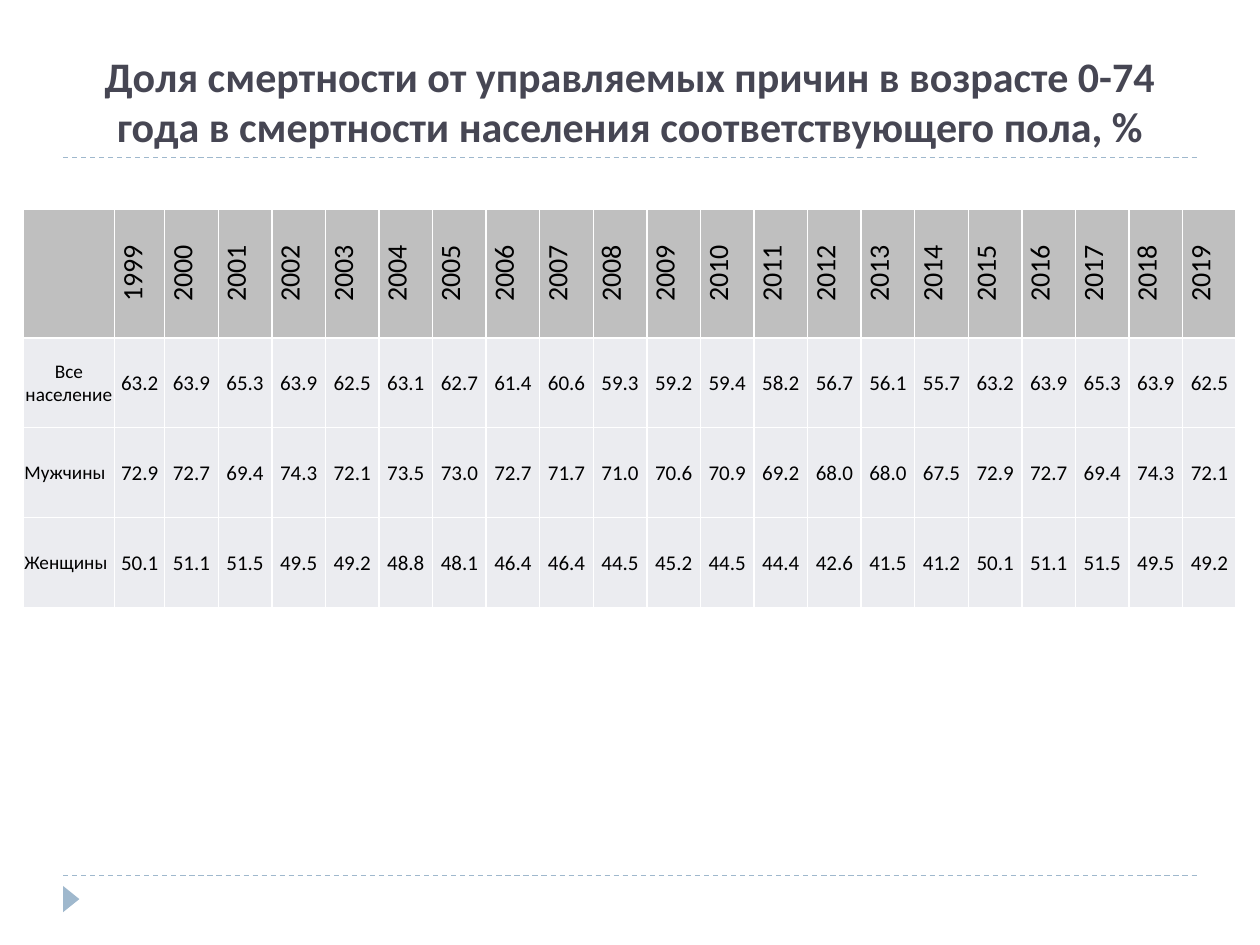
"""Build a slide with a table of death shares by year and sex."""
from dataclasses import dataclass

from lxml.etree import SubElement
from pptx import Presentation
from pptx.dml.color import RGBColor
from pptx.enum.dml import MSO_LINE
from pptx.enum.shapes import MSO_CONNECTOR, MSO_SHAPE
from pptx.enum.text import MSO_ANCHOR, MSO_AUTO_SIZE, PP_ALIGN
from pptx.oxml import parse_xml
from pptx.oxml.ns import nsdecls, qn
from pptx.util import Cm, Pt


@dataclass(frozen=True)
class Theme:
    """Hold the colours, font and type sizes."""
    font: str = "Calibri"
    title: str = "464653"
    text: str = "000000"
    accent: str = "9FB8CD"
    head: str = "BFBFBF"
    body: str = "EBECF0"
    grid: str = "FFFFFF"
    title_pt: int = 24
    year_pt: int = 16
    label_pt: int = 11
    value_pt: int = 12


THEME = Theme()
TITLE = ("Доля смертности от управляемых причин в возрасте 0-74 года "
         "в смертности населения соответствующего пола, %")
YEARS = [str(year) for year in range(1999, 2020)]
ROWS = {
    "Все население": "63.2 63.9 65.3 63.9 62.5 63.1 62.7 61.4 60.6 59.3 59.2 "
                     "59.4 58.2 56.7 56.1 55.7 63.2 63.9 65.3 63.9 62.5",
    "Мужчины": "72.9 72.7 69.4 74.3 72.1 73.5 73.0 72.7 71.7 71.0 70.6 "
               "70.9 69.2 68.0 68.0 67.5 72.9 72.7 69.4 74.3 72.1",
    "Женщины": "50.1 51.1 51.5 49.5 49.2 48.8 48.1 46.4 46.4 44.5 45.2 "
               "44.5 44.4 42.6 41.5 41.2 50.1 51.1 51.5 49.5 49.2",
}


def add_text(frame, text, size, tint, align=PP_ALIGN.CENTER, bold=False):
    """Write one styled run into the first paragraph of a frame."""
    para = frame.paragraphs[0]
    para.alignment = align
    run = para.add_run()
    run.text = text
    run.font.name = THEME.font
    run.font.size = Pt(size)
    run.font.bold = bold
    run.font.color.rgb = RGBColor.from_string(tint)


def add_rule(slide, left, top, width):
    """Draw a dashed level rule."""
    rule = slide.shapes.add_connector(
        MSO_CONNECTOR.STRAIGHT, Cm(left), Cm(top), Cm(left + width), Cm(top))
    rule.line.color.rgb = RGBColor.from_string(THEME.accent)
    rule.line.width = Pt(0.75)
    rule.line.dash_style = MSO_LINE.DASH
    SubElement(rule._element.spPr, qn("a:effectLst"))


def add_title(slide, left, top, width, height):
    """Place the title with a rule along its lower edge."""
    title = slide.shapes.title
    title.left, title.top = Cm(left), Cm(top)
    title.width, title.height = Cm(width), Cm(height)
    frame = title.text_frame
    frame.word_wrap = True
    frame.auto_size = MSO_AUTO_SIZE.NONE
    frame.vertical_anchor = MSO_ANCHOR.BOTTOM
    add_text(frame, TITLE, THEME.title_pt, THEME.title, bold=True)
    add_rule(slide, left, top + height, width)


def add_foot(slide, left, top, width):
    """Draw the foot rule and the marker below it."""
    add_rule(slide, left, top, width)
    mark = slide.shapes.add_shape(
        MSO_SHAPE.ISOSCELES_TRIANGLE,
        Cm(left - 0.1), Cm(top + 0.31), Cm(0.53), Cm(0.33))
    mark.rotation = 90
    mark.shadow.inherit = False
    mark.fill.solid()
    mark.fill.fore_color.rgb = RGBColor.from_string(THEME.accent)
    mark.line.fill.background()


def style_cell(cell, tint):
    """Set the fill, thin margins and borders of a cell."""
    cell.fill.solid()
    cell.fill.fore_color.rgb = RGBColor.from_string(tint)
    cell.vertical_anchor = MSO_ANCHOR.MIDDLE
    cell.margin_left = cell.margin_right = cell.margin_top = Cm(0.02)
    cell.margin_bottom = 0
    props = cell._tc.get_or_add_tcPr()
    for spot, side in enumerate(("lnL", "lnR", "lnT", "lnB")):
        props.insert(spot, parse_xml(
            f'<a:{side} {nsdecls("a")} w="{Pt(1)}"><a:solidFill>'
            f'<a:srgbClr val="{THEME.grid}"/></a:solidFill></a:{side}>'))


def add_grid(slide, left, top, width, height):
    """Fill the table of shares, one column for each year."""
    first, second, head = 1.84, 1.01, 2.59
    table = slide.shapes.add_table(
        len(ROWS) + 1, len(YEARS) + 1,
        Cm(left), Cm(top), Cm(width), Cm(height)).table
    step = (width - first - second) / (len(YEARS) - 1)
    sizes = [first, second] + [step] * (len(YEARS) - 1)
    for column, size in zip(table.columns, sizes):
        column.width = Cm(size)
    for row in table.rows:
        row.height = Cm((height - head) / len(ROWS))
    table.rows[0].height = Cm(head)

    style_cell(table.cell(0, 0), THEME.head)
    for col, year in enumerate(YEARS, 1):
        cell = table.cell(0, col)
        style_cell(cell, THEME.head)
        cell._tc.tcPr.set("vert", "vert270")
        add_text(cell.text_frame, year, THEME.year_pt, THEME.text)
    for row, (label, values) in enumerate(ROWS.items(), 1):
        for col, text in enumerate([label, *values.split()]):
            cell = table.cell(row, col)
            style_cell(cell, THEME.body)
            size = THEME.value_pt if col else THEME.label_pt
            align = PP_ALIGN.LEFT if row > 1 and not col else PP_ALIGN.CENTER
            add_text(cell.text_frame, text, size, THEME.text, align)


def main():
    """Build and save the slide."""
    deck = Presentation()
    deck.slide_width, deck.slide_height = Cm(25.4), Cm(19.05)
    slide = deck.slides.add_slide(deck.slide_layouts[5])
    add_foot(slide, 1.27, 17.65, 22.86)
    add_title(slide, 1.27, 0.43, 22.86, 2.74)
    add_grid(slide, 0.47, 4.22, 24.46, 8.03)
    deck.save("out.pptx")


if __name__ == "__main__":
    main()
